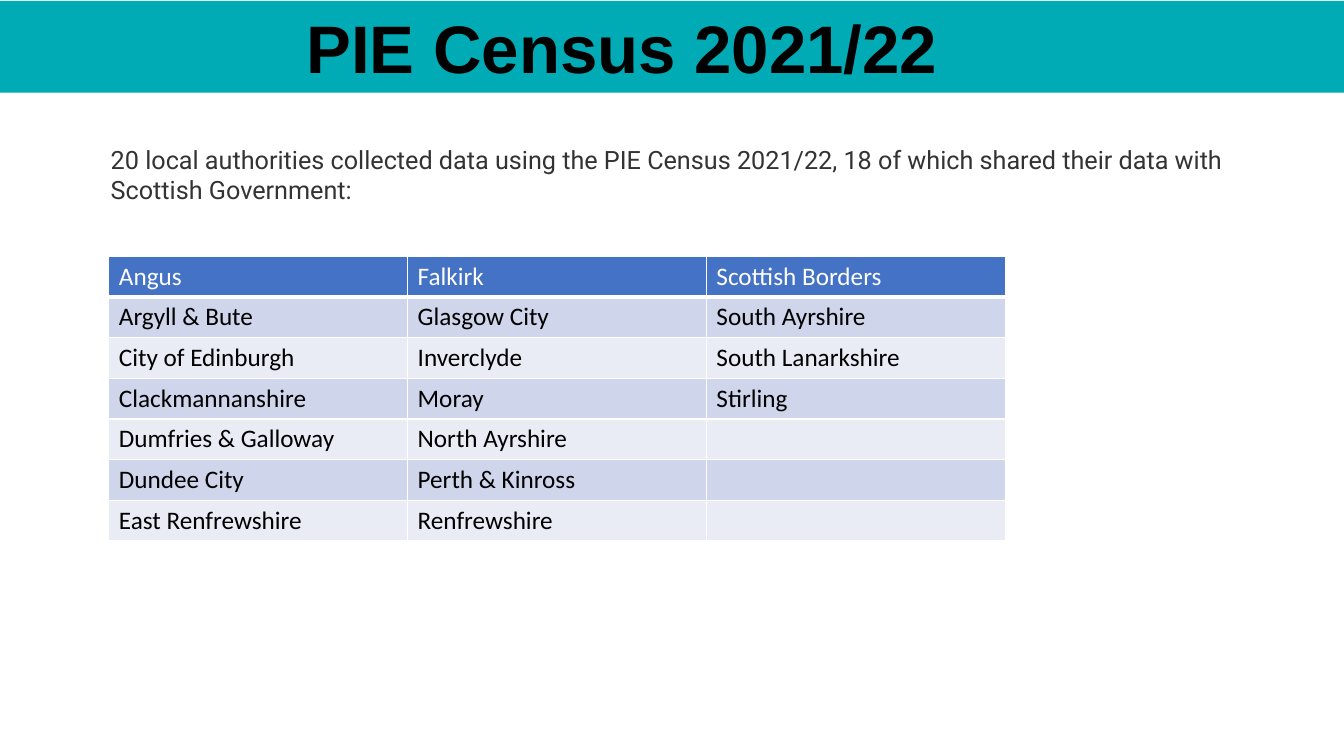
from itertools import product

from lxml.etree import SubElement
from pptx import Presentation
from pptx.dml.color import RGBColor
from pptx.enum.shapes import MSO_SHAPE
from pptx.enum.text import MSO_ANCHOR, PP_ALIGN
from pptx.oxml.ns import qn
from pptx.util import Inches, Pt

# Content
TITLE = "PIE Census 2021/22"
INTRO = ("20 local authorities collected data using the PIE Census 2021/22, "
         "18 of which shared their data with Scottish Government:")
AUTHORITIES = [
    ("Angus", "Falkirk", "Scottish Borders"),
    ("Argyll & Bute", "Glasgow City", "South Ayrshire"),
    ("City of Edinburgh", "Inverclyde", "South Lanarkshire"),
    ("Clackmannanshire", "Moray", "Stirling"),
    ("Dumfries & Galloway", "North Ayrshire", ""),
    ("Dundee City", "Perth & Kinross", ""),
    ("East Renfrewshire", "Renfrewshire", ""),
]

# Theme
THEME = {
    "band": "00ABB5",
    "header": "4472C4",
    "stripes": ("E9EBF5", "CFD5EA"),
    "border": "FFFFFF",
    "title": {"name": "Arial", "size": Pt(48), "bold": True, "color": "000000"},
    "intro": {"name": "Roboto", "size": Pt(18), "color": "333333"},
    "head": {"name": "Calibri", "size": Pt(18), "bold": False, "color": "FFFFFF"},
    "body": {"name": "Calibri", "size": Pt(18), "bold": False, "color": "000000"},
}

# Layout: left, top, width, height
BAND = (-0.03, 0.01, 13.37, 0.91)
INTRO_BOX = (1, 1.38, 11.33, 0.71)
TABLE = (1.08, 2.54, 8.89, 2.83)
TITLE_INDENT = 3.07


def inches(box):
    return [Inches(v) for v in box]


def paint(obj, color):
    obj.fill.solid()
    obj.fill.fore_color.rgb = RGBColor.from_string(color)


def write(tf, text, style):
    p = tf.paragraphs[0]
    p.alignment = PP_ALIGN.LEFT
    font = p.font
    if text:
        r = p.add_run()
        r.text = text
        font = r.font
    for key, value in style.items():
        if key == "color":
            font.color.rgb = RGBColor.from_string(value)
        else:
            setattr(font, key, value)


def add_borders(cell, widths):
    tc_pr = cell._tc.get_or_add_tcPr()
    for side, width in widths.items():
        ln = SubElement(tc_pr, qn(f"a:ln{side}"), w=str(Pt(width)))
        fill = SubElement(ln, qn("a:solidFill"))
        SubElement(fill, qn("a:srgbClr"), val=THEME["border"])


def add_title(s):
    sp = s.shapes.add_shape(MSO_SHAPE.RECTANGLE, *inches(BAND))
    sp.shadow.inherit = False
    paint(sp, THEME["band"])
    sp.line.fill.background()
    tf = sp.text_frame
    tf.margin_left = Inches(TITLE_INDENT)
    tf.vertical_anchor = MSO_ANCHOR.MIDDLE
    write(tf, TITLE, THEME["title"])


def add_intro(s):
    tf = s.shapes.add_textbox(*inches(INTRO_BOX)).text_frame
    tf.word_wrap = True
    write(tf, INTRO, THEME["intro"])


def add_authorities(s):
    rows, cols = len(AUTHORITIES), len(AUTHORITIES[0])
    table = s.shapes.add_table(rows, cols, *inches(TABLE)).table
    for i, j in product(range(rows), range(cols)):
        cell = table.cell(i, j)
        is_head = i == 0
        # Borders come before the fill in the cell's XML
        add_borders(cell, {"L": 1, "R": 1, "T": 3 if i == 1 else 1,
                           "B": 3 if is_head else 1})
        paint(cell, THEME["header"] if is_head else THEME["stripes"][i % 2])
        write(cell.text_frame, AUTHORITIES[i][j],
              THEME["head" if is_head else "body"])


def main():
    prs = Presentation()
    prs.slide_width, prs.slide_height = Inches(13.33), Inches(7.5)
    s = prs.slides.add_slide(prs.slide_layouts[6])
    add_title(s)
    add_intro(s)
    add_authorities(s)
    prs.save("out.pptx")


if __name__ == "__main__":
    main()
